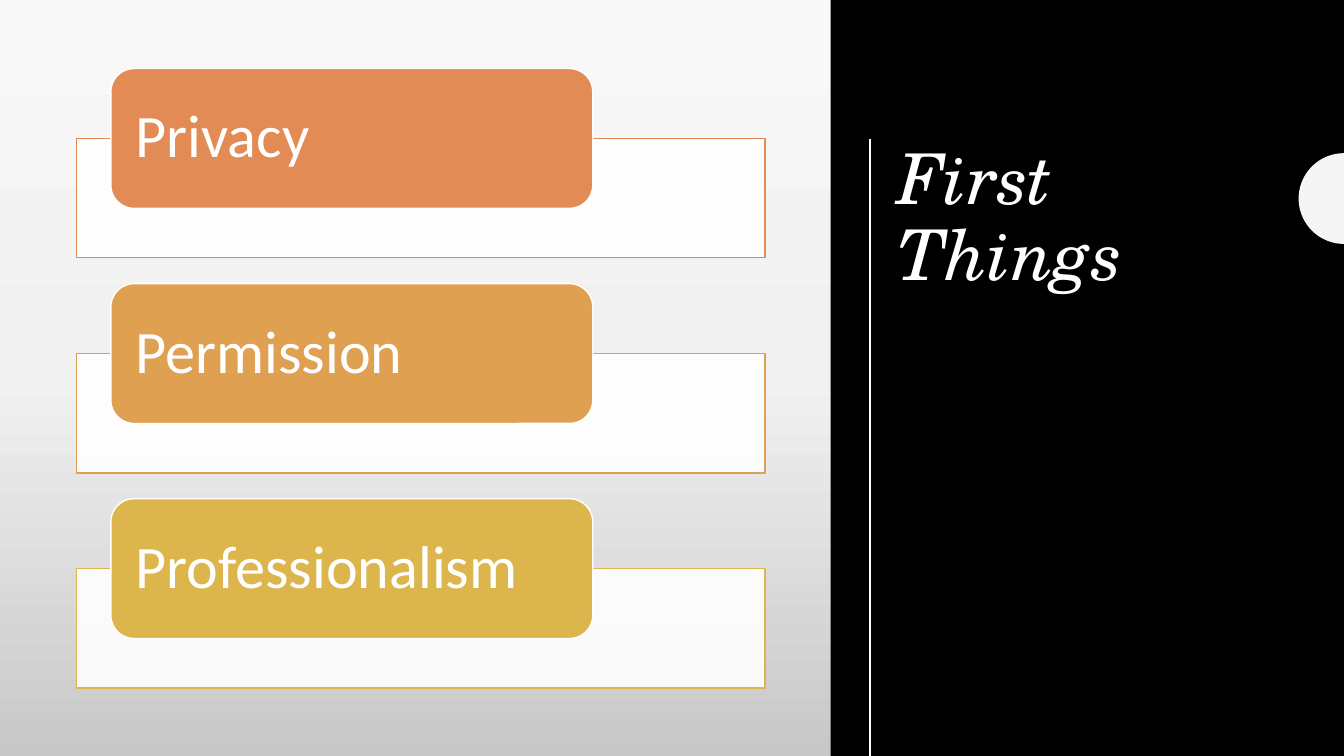
from copy import deepcopy
from math import cos, pi, sin

from lxml import etree
from pptx import Presentation
from pptx.dml.color import RGBColor
from pptx.enum.shapes import MSO_CONNECTOR, MSO_SHAPE
from pptx.enum.text import MSO_ANCHOR, PP_ALIGN
from pptx.oxml.ns import qn
from pptx.util import Inches, Pt

RECT, ROUNDED = MSO_SHAPE.RECTANGLE, MSO_SHAPE.ROUNDED_RECTANGLE
STRAIGHT = MSO_CONNECTOR.STRAIGHT
TOP, MIDDLE = MSO_ANCHOR.TOP, MSO_ANCHOR.MIDDLE
LEFT = PP_ALIGN.LEFT

COLORS = {
    "paper": "F5F5F5", "white": "FFFFFF", "black": "000000",
    "light": "F8F8F8", "mid": "F1F1F1", "shade": "C8C8C8",
    "orange": "E28B55", "amber": "DFA051", "gold": "DCB64D",
}


class Deck:
    """Style and current slide; lengths are percent of slide width and height."""

    def __init__(self):
        self.prs = Presentation()
        self.prs.slide_width, self.prs.slide_height = Inches(13.333), Inches(7.5)
        self.s = self.prs.slides.add_slide(self.prs.slide_layouts[6])
        self.paint(self.s.background.fill, "paper")

    def x(self, share):
        return round(self.prs.slide_width * share / 100)

    def y(self, share):
        return round(self.prs.slide_height * share / 100)

    def box(self, left, top, width, height):
        return self.x(left), self.y(top), self.x(width), self.y(height)

    def rgb(self, name):
        return RGBColor.from_string(COLORS[name])

    def paint(self, fill, name):
        fill.solid()
        fill.fore_color.rgb = self.rgb(name)

    def finish(self, sp, fill, line=None, opacity=None):
        sp.shadow.inherit = False
        self.paint(sp.fill, fill)
        if opacity is not None:
            color = sp._element.spPr.find(qn("a:solidFill"))[0]
            etree.SubElement(color, qn("a:alpha"), val=str(opacity * 1000))
        if line:
            sp.line.color.rgb = self.rgb(line)
            sp.line.width = Pt(1)
        else:
            sp.line.fill.background()
        return sp

    def shape(self, kind, area, fill, line=None, opacity=None):
        sp = self.s.shapes.add_shape(kind, *self.box(*area))
        return self.finish(sp, fill, line, opacity)

    def gradient(self, area, names):
        sp = self.shape(RECT, area, names[0])
        sp.fill.gradient()
        sp.fill.gradient_angle = 270
        stops = sp._element.spPr.find(qn("a:gradFill")).find(qn("a:gsLst"))
        while len(stops) < len(names):
            stops.append(deepcopy(stops[0]))
        for i, (stop, name) in enumerate(zip(sp.fill.gradient_stops, names)):
            stop.position = i / (len(names) - 1)
            stop.color.rgb = self.rgb(name)

    def text(self, sp, text, size, font, anchor, inset=0.1, italic=False):
        tf = sp.text_frame
        tf.word_wrap = True
        tf.vertical_anchor = anchor
        tf.margin_left = tf.margin_right = Inches(inset)
        p = tf.paragraphs[0]
        p.alignment, p.line_spacing = LEFT, 0.9
        r = p.add_run()
        r.text = text
        r.font.size, r.font.name, r.font.italic = Pt(size), font, italic
        r.font.color.rgb = self.rgb("white")

    def textbox(self, area, *args, **style):
        self.text(self.s.shapes.add_textbox(*self.box(*area)), *args, **style)

    def line(self, x1, y1, x2, y2, color, width):
        ln = self.s.shapes.add_connector(
            STRAIGHT, self.x(x1), self.y(y1), self.x(x2), self.y(y2))
        ln.line.color.rgb = self.rgb(color)
        ln.line.width = Pt(width)
        etree.SubElement(ln._element.spPr, qn("a:effectLst"))

    def half_disc(self, right, middle, radius, fill, steps=48):
        cx, cy, rad = self.x(right), self.y(middle), self.y(radius)
        angles = [pi / 2 + pi * i / steps for i in range(steps + 1)]
        points = [(round(cx + rad * cos(a)), round(cy + rad * sin(a))) for a in angles]
        builder = self.s.shapes.build_freeform(*points[0])
        builder.add_line_segments(points[1:], close=True)
        self.finish(builder.convert_to_shape(), fill)


def main():
    deck = Deck()

    # Backdrop and title panel
    deck.gradient((0, 0, 100, 100), ("light", "mid", "shade"))
    deck.shape(RECT, (61.8, 0, 38.2, 100), "black")
    deck.textbox((66.02, 18.4, 28.73, 62), "First Things", 50,
                 "TeX Gyre Schola", TOP, italic=True)
    deck.line(64.74, 18.4, 64.74, 100, "white", 2)
    deck.half_disc(100, 26.27, 6, "paper")

    # List: a pale bar with a coloured label over its top edge
    items = (("Privacy", "orange"), ("Permission", "amber"), ("Professionalism", "gold"))
    for i, (word, color) in enumerate(items):
        top = 9.07 + 28.45 * i
        deck.shape(RECT, (5.67, top + 9.23, 51.24, 15.8), "white", color, opacity=90)
        label = deck.shape(ROUNDED, (8.25, top, 35.86, 18.5), color, "white")
        deck.text(label, word, 43, "Calibri", MIDDLE, inset=0.18)

    deck.prs.save("out.pptx")


if __name__ == "__main__":
    main()
